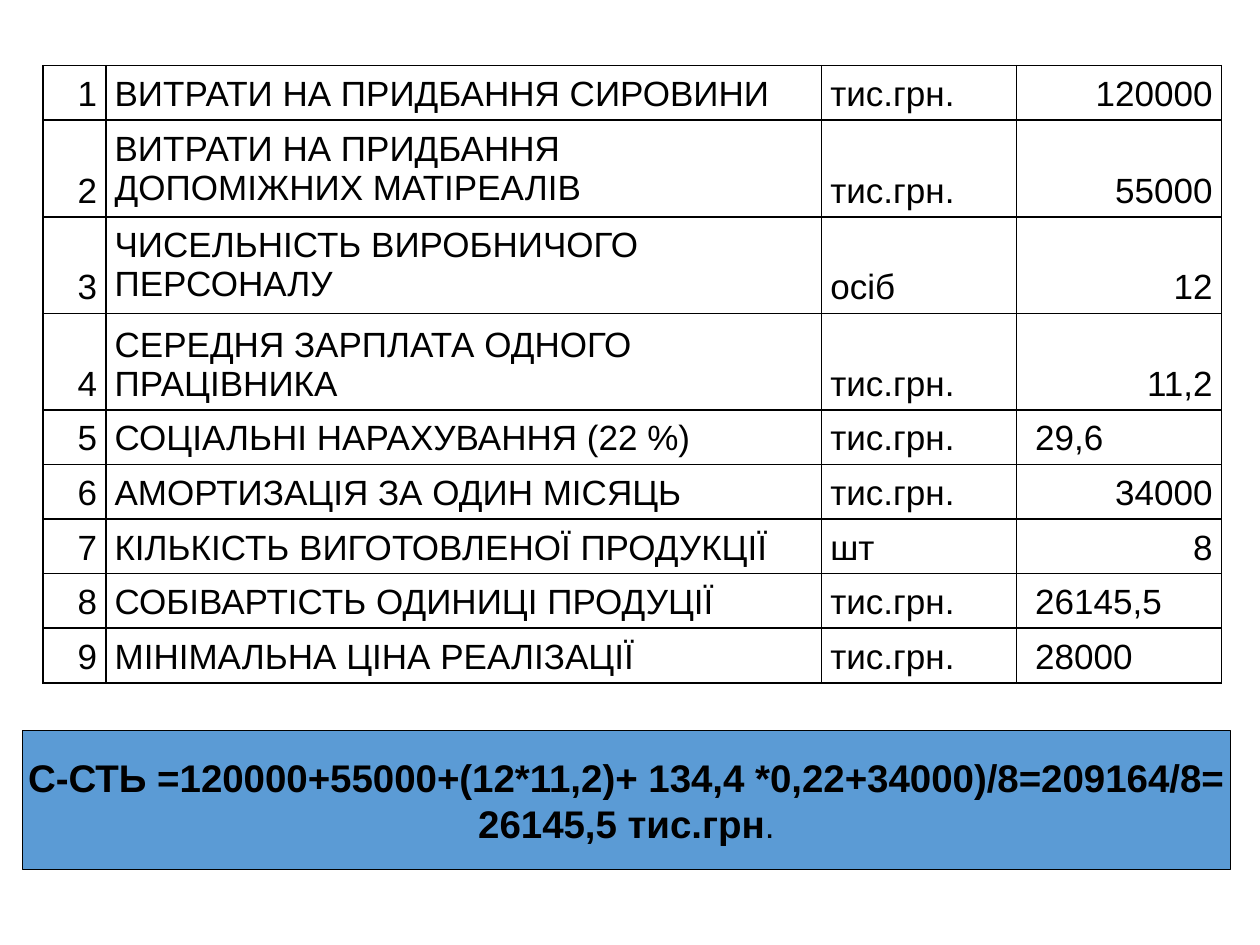
"""Build a slide with a production cost table and the unit cost formula."""
from dataclasses import dataclass

from lxml.etree import SubElement
from pptx import Presentation
from pptx.dml.color import RGBColor
from pptx.enum.shapes import MSO_SHAPE as Preset
from pptx.enum.text import MSO_ANCHOR as Anchor, PP_ALIGN as Align
from pptx.oxml.ns import qn
from pptx.util import Pt

BLACK = "000000"
WHITE = "FFFFFF"
BLUE = "5B9BD5"
FONT = "Arial"
COLUMN_WIDTHS = (36, 409, 111.5, 117)
SINGLE_HEIGHT = 31.2
DOUBLE_HEIGHT = 55.2


@dataclass(frozen=True)
class CostItem:
    label: str
    unit: str
    value: str
    double: bool = False
    label_anchor: Anchor = Anchor.BOTTOM
    calculated: bool = False


COST_ITEMS = (
    CostItem("ВИТРАТИ НА ПРИДБАННЯ СИРОВИНИ", "тис.грн.", "120000"),
    CostItem("ВИТРАТИ НА ПРИДБАННЯ ДОПОМІЖНИХ МАТІРЕАЛІВ", "тис.грн.", "55000",
             double=True, label_anchor=Anchor.MIDDLE),
    CostItem("ЧИСЕЛЬНІСТЬ ВИРОБНИЧОГО ПЕРСОНАЛУ", "осіб", "12",
             double=True, label_anchor=Anchor.MIDDLE),
    CostItem("СЕРЕДНЯ ЗАРПЛАТА ОДНОГО ПРАЦІВНИКА", "тис.грн.", "11,2", double=True),
    CostItem("СОЦІАЛЬНІ НАРАХУВАННЯ (22 %)", "тис.грн.", "29,6", calculated=True),
    CostItem("АМОРТИЗАЦІЯ ЗА ОДИН МІСЯЦЬ", "тис.грн.", "34000"),
    CostItem("КІЛЬКІСТЬ ВИГОТОВЛЕНОЇ ПРОДУКЦІЇ", "шт", "8"),
    CostItem("СОБІВАРТІСТЬ ОДИНИЦІ ПРОДУЦІЇ", "тис.грн.", "26145,5", calculated=True),
    CostItem("МІНІМАЛЬНА ЦІНА РЕАЛІЗАЦІЇ", "тис.грн.", "28000", calculated=True),
)


def color(hex_code: str) -> RGBColor:
    return RGBColor.from_string(hex_code)


def set_font(font, size: float, bold: bool = False) -> None:
    font.name = FONT
    font.size = Pt(size)
    font.bold = bold
    font.color.rgb = color(BLACK)


def add_borders(cell) -> None:
    properties = cell._tc.get_or_add_tcPr()
    for side in ("lnL", "lnR", "lnT", "lnB"):
        border = SubElement(properties, qn(f"a:{side}"), w=str(Pt(1)))
        fill = SubElement(border, qn("a:solidFill"))
        SubElement(fill, qn("a:srgbClr"), val=BLACK)


def fill_cell(cell, text: str, align: Align, anchor: Anchor, indent: float) -> None:
    add_borders(cell)
    cell.fill.solid()
    cell.fill.fore_color.rgb = color(WHITE)
    cell.margin_left = Pt(5 + indent)
    cell.margin_right = Pt(5)
    cell.margin_top = cell.margin_bottom = Pt(3.6)
    cell.vertical_anchor = anchor
    cell.text = text
    paragraph = cell.text_frame.paragraphs[0]
    paragraph.alignment = align
    set_font(paragraph.font, 20)


def add_cost_table(slide) -> None:
    heights = [DOUBLE_HEIGHT if item.double else SINGLE_HEIGHT for item in COST_ITEMS]
    table = slide.shapes.add_table(
        len(COST_ITEMS), len(COLUMN_WIDTHS), Pt(24.5), Pt(37.5),
        Pt(sum(COLUMN_WIDTHS)), Pt(sum(heights))).table
    table.first_row = table.horz_banding = False
    for column, width in zip(table.columns, COLUMN_WIDTHS):
        column.width = Pt(width)
    for index, (item, height) in enumerate(zip(COST_ITEMS, heights)):
        table.rows[index].height = Pt(height)
        value_align = Align.LEFT if item.calculated else Align.RIGHT
        value_indent = 5.6 if item.calculated else 0
        contents = (
            (str(index + 1), Align.RIGHT, Anchor.BOTTOM, 0),
            (item.label, Align.LEFT, item.label_anchor, 0),
            (item.unit, Align.LEFT, Anchor.BOTTOM, 0),
            (item.value, value_align, Anchor.BOTTOM, value_indent),
        )
        for cell, content in zip(table.rows[index].cells, contents):
            fill_cell(cell, *content)


def add_formula(slide) -> None:
    formula = slide.shapes.add_shape(
        Preset.RECTANGLE, Pt(13), Pt(417.5), Pt(690), Pt(79.5))
    formula.shadow.inherit = False
    formula.fill.solid()
    formula.fill.fore_color.rgb = color(BLUE)
    formula.line.color.rgb = color(BLACK)
    formula.line.width = Pt(0.75)
    frame = formula.text_frame
    frame.word_wrap = False
    frame.vertical_anchor = Anchor.MIDDLE
    calculation, result = frame.paragraphs[0], frame.add_paragraph()
    calculation.text = "С-СТЬ =120000+55000+(12*11,2)+ 134,4 *0,22+34000)/8=209164/8="
    result.text = "26145,5 тис.грн"
    for paragraph in (calculation, result):
        paragraph.alignment = Align.CENTER
        set_font(paragraph.font, 22, bold=True)
    full_stop = result.add_run()
    full_stop.text = "."
    set_font(full_stop.font, 20)


def main() -> None:
    presentation = Presentation()
    presentation.slide_width, presentation.slide_height = Pt(720), Pt(540)
    slide = presentation.slides.add_slide(presentation.slide_layouts[6])
    add_cost_table(slide)
    add_formula(slide)
    presentation.save("out.pptx")


if __name__ == "__main__":
    main()
